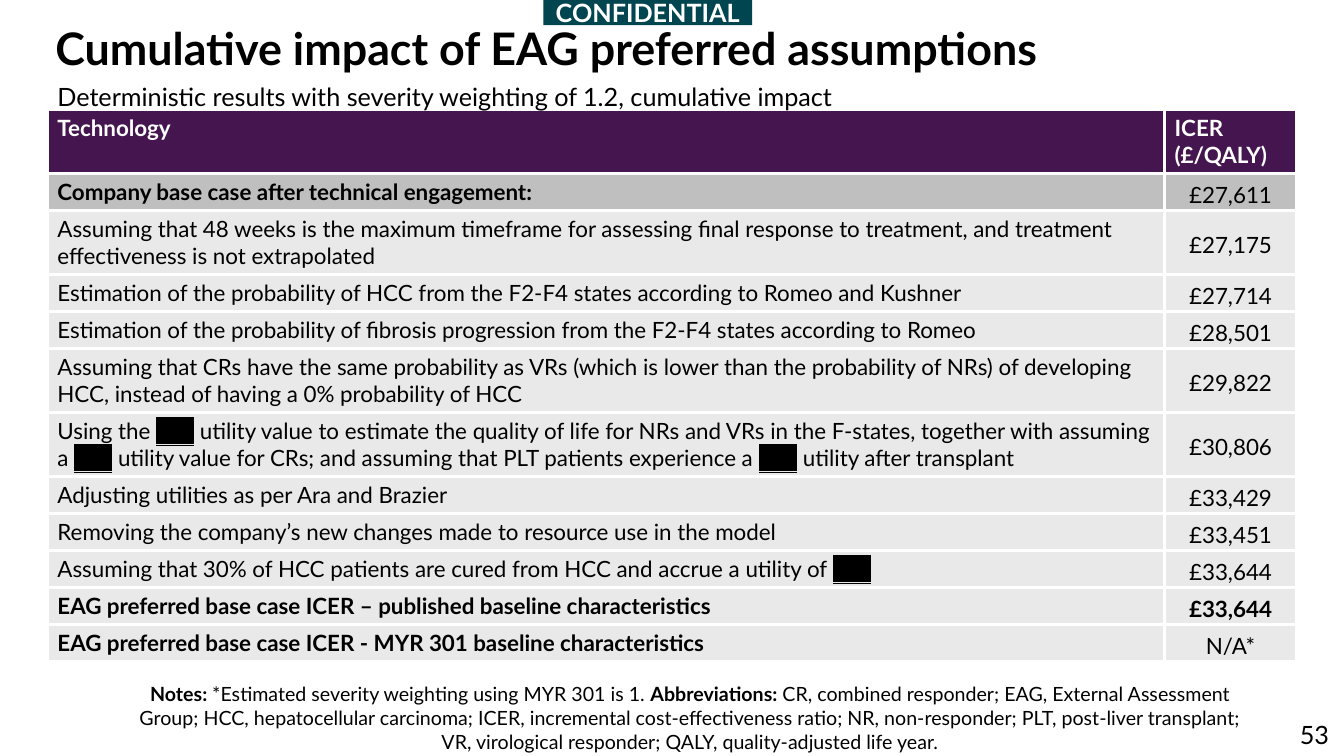
from lxml.etree import SubElement
from pptx import Presentation
from pptx.dml.color import RGBColor
from pptx.enum.shapes import MSO_SHAPE as SHAPE
from pptx.enum.text import MSO_ANCHOR as ANCHOR, PP_ALIGN as ALIGN
from pptx.oxml import parse_xml
from pptx.oxml.ns import nsdecls, qn
from pptx.util import Inches, Pt

FONT = "Lato"
BLACK = RGBColor(0x00, 0x00, 0x00)
WHITE = RGBColor(0xFF, 0xFF, 0xFF)
TEAL = RGBColor(0x00, 0x45, 0x50)
PURPLE = RGBColor(0x45, 0x15, 0x50)
MID_GREY = RGBColor(0xBF, 0xBF, 0xBF)
LIGHT_GREY = RGBColor(0xE9, 0xE9, 0xE9)

REDACTED = "****"
HEADINGS = ("Technology", "ICER (£/QALY)")
# assumption, ICER, lines of text, bold assumption, bold ICER
ASSUMPTIONS = [
    ("Company base case after technical engagement:", "£27,611", 1, True, False),
    ("Assuming that 48 weeks is the maximum timeframe for assessing final response to "
     "treatment, and treatment effectiveness is not extrapolated", "£27,175", 2, False, False),
    ("Estimation of the probability of HCC from the F2-F4 states according to Romeo and "
     "Kushner", "£27,714", 1, False, False),
    ("Estimation of the probability of fibrosis progression from the F2-F4 states according "
     "to Romeo", "£28,501", 1, False, False),
    ("Assuming that CRs have the same probability as VRs (which is lower than the probability "
     "of NRs) of developing HCC, instead of having a 0% probability of HCC",
     "£29,822", 2, False, False),
    ("Using the **** utility value to estimate the quality of life for NRs and VRs in the "
     "F-states, together with assuming a **** utility value for CRs; and assuming that PLT "
     "patients experience a **** utility after transplant", "£30,806", 2, False, False),
    ("Adjusting utilities as per Ara and Brazier", "£33,429", 1, False, False),
    ("Removing the company’s new changes made to resource use in the model",
     "£33,451", 1, False, False),
    ("Assuming that 30% of HCC patients are cured from HCC and accrue a utility of ****",
     "£33,644", 1, False, False),
    ("EAG preferred base case ICER – published baseline characteristics",
     "£33,644", 1, True, True),
    ("EAG preferred base case ICER - MYR 301 baseline characteristics",
     "N/A*", 1, True, False),
]
NOTES = [
    ("Notes: ", True),
    ("*Estimated severity weighting using MYR 301 is 1. ", False),
    ("Abbreviations: ", True),
    ("CR, combined responder; EAG, External Assessment Group; HCC, hepatocellular carcinoma; "
     "ICER, incremental cost-effectiveness ratio; NR, non-responder; PLT, post-liver "
     "transplant; VR, virological responder; QALY, quality-adjusted life year.", False),
]


def style_run(run, size, color=BLACK, bold=False):
    font = run.font
    font.name, font.size, font.bold = FONT, Pt(size), bold
    font.color.rgb = color


def redact(run):
    run.font.underline = True
    highlight = parse_xml(f'<a:highlight {nsdecls("a")}><a:srgbClr val="{BLACK}"/></a:highlight>')
    run.font._element.find(qn("a:solidFill")).addnext(highlight)


def add_text(slide, box, segments, size, align=ALIGN.LEFT, wrap=True):
    frame = slide.shapes.add_textbox(*map(Inches, box)).text_frame
    frame.word_wrap = wrap
    paragraph = frame.paragraphs[0]
    paragraph.alignment = align
    for words, bold in segments:
        run = paragraph.add_run()
        run.text = words
        style_run(run, size, bold=bold)
    return paragraph


def add_confidential_banner(slide, box):
    banner = slide.shapes.add_shape(SHAPE.RECTANGLE, *map(Inches, box))
    banner.shadow.inherit = False
    banner.fill.solid()
    banner.fill.fore_color.rgb = TEAL
    banner.line.fill.background()
    frame = banner.text_frame
    frame.text = "CONFIDENTIAL"
    frame.vertical_anchor = ANCHOR.MIDDLE
    frame.paragraphs[0].alignment = ALIGN.CENTER
    style_run(frame.paragraphs[0].runs[0], 18, WHITE, True)


def fill_cell(cell, words, fill, color=BLACK, bold=False):
    cell.fill.solid()
    cell.fill.fore_color.rgb = fill
    # White borders precede the fill in the cell properties
    properties = cell._tc.get_or_add_tcPr()
    for index, side in enumerate(("lnL", "lnR", "lnT", "lnB")):
        border = SubElement(properties, qn(f"a:{side}"), w=str(Pt(2.25)))
        SubElement(SubElement(border, qn("a:solidFill")), qn("a:srgbClr"), val=str(WHITE))
        properties.insert(index, border)
    # Redacted values sit between the plain pieces of text
    paragraph = cell.text_frame.paragraphs[0]
    for index, piece in enumerate(words.split(REDACTED)):
        if index:
            hidden_value = paragraph.add_run()
            hidden_value.text = REDACTED
            style_run(hidden_value, 16, color, bold)
            redact(hidden_value)
        if piece:
            run = paragraph.add_run()
            run.text = piece
            style_run(run, 16, color, bold)


def center_icer(cell):
    cell.vertical_anchor = ANCHOR.MIDDLE
    cell.margin_left = cell.margin_right = Inches(0.07)
    cell.margin_top = cell.margin_bottom = 0
    paragraph = cell.text_frame.paragraphs[0]
    paragraph.alignment = ALIGN.CENTER
    paragraph.line_spacing = 1.2
    paragraph.space_before = paragraph.space_after = Pt(2)


def add_icer_table(slide, box):
    left, top, width, height = map(Inches, box)
    table = slide.shapes.add_table(len(ASSUMPTIONS) + 1, 2, left, top, width, height).table
    icer_width = Inches(1.31)
    table.columns[0].width = width - icer_width
    table.columns[1].width = icer_width

    # Header
    table.rows[0].height = Inches(0.62)
    for column, heading in enumerate(HEADINGS):
        fill_cell(table.cell(0, column), heading, PURPLE, WHITE, True)

    # Assumptions and their ICERs
    for row, (assumption, icer, lines, bold, icer_bold) in enumerate(ASSUMPTIONS, 1):
        table.rows[row].height = Inches(0.1 + 0.26 * lines)
        fill = MID_GREY if row == 1 else LIGHT_GREY
        fill_cell(table.cell(row, 0), assumption, fill, bold=bold)
        fill_cell(table.cell(row, 1), icer, fill, bold=icer_bold)
        center_icer(table.cell(row, 1))


def build_impact_slide(prs):
    slide = prs.slides.add_slide(prs.slide_layouts[6])
    # Page number and headings
    add_text(slide, (11.44, 7.09, 1.84, 0.4), [("53", False)], 18, ALIGN.RIGHT)
    title = add_text(slide, (0.45, 0.22, 12.44, 0.55),
                     [("Cumulative impact of EAG preferred assumptions", True)], 32)
    title.line_spacing = 0.9
    # Results
    add_icer_table(slide, (0.47, 1.09, 12.39, 5.47))
    add_text(slide, (0.47, 0.76, 8.01, 0.4),
             [("Deterministic results with severity weighting of 1.2, cumulative impact", False)],
             18, wrap=False)
    # Notes and banner
    add_text(slide, (1.17, 6.72, 11.35, 0.81), NOTES, 14, ALIGN.CENTER)
    add_confidential_banner(slide, (5.39, 0, 2.07, 0.25))


def main():
    prs = Presentation()
    prs.slide_width, prs.slide_height = Inches(13.33), Inches(7.5)
    build_impact_slide(prs)
    prs.save("out.pptx")


if __name__ == "__main__":
    main()
